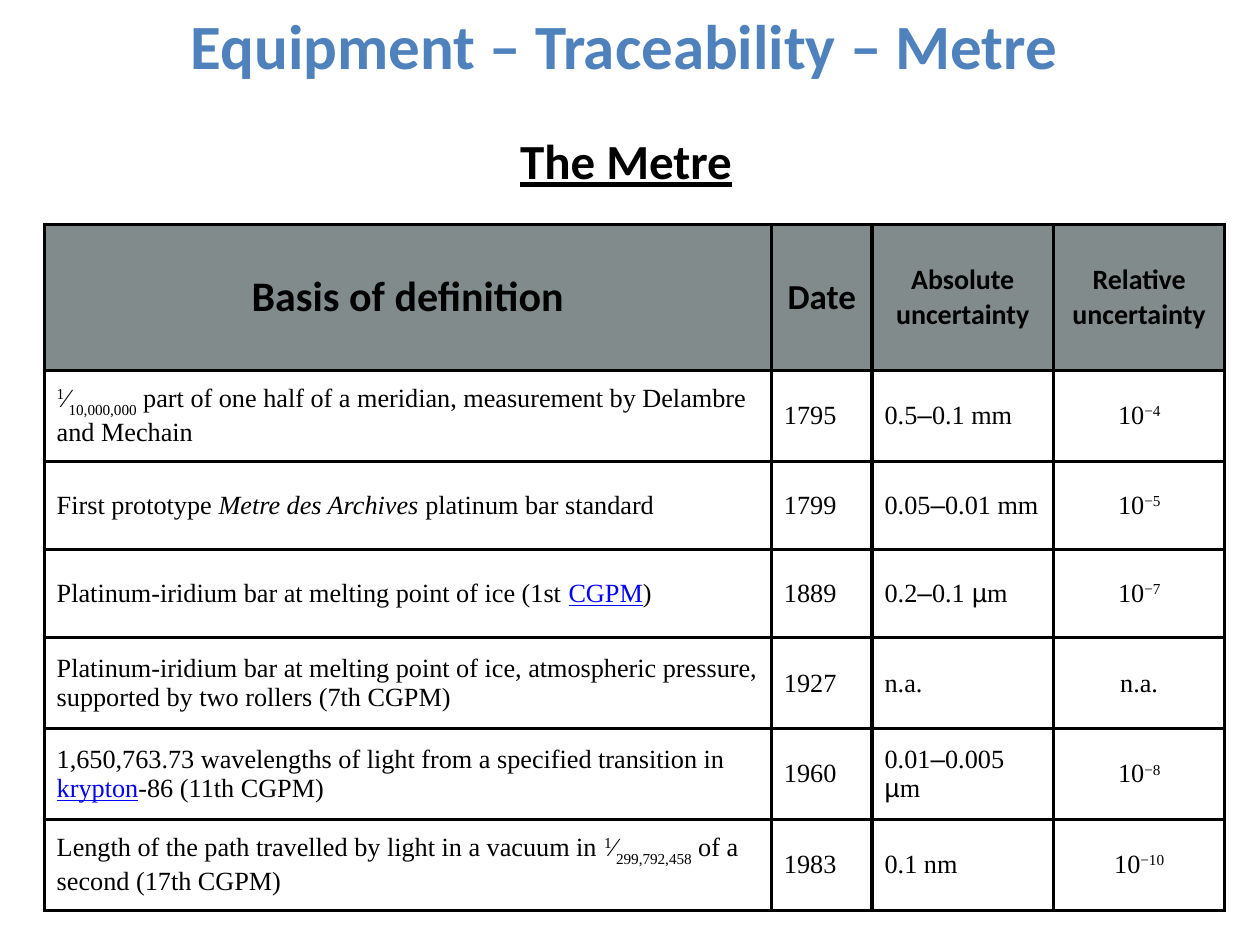
from typing import NamedTuple

from lxml import etree
from pptx import Presentation
from pptx.dml.color import RGBColor
from pptx.enum.text import MSO_ANCHOR, PP_ALIGN
from pptx.oxml.ns import qn
from pptx.util import Cm, Pt

CENTER, LEFT = PP_ALIGN.CENTER, PP_ALIGN.LEFT
TOP, MIDDLE = MSO_ANCHOR.TOP, MSO_ANCHOR.MIDDLE
TITLE_ONLY = 5
COLORS = {"title": "4F81BD", "text": "000000", "link": "0000FF",
          "header": "818B8B", "border": "000000"}
SANS, SERIF, SYMBOL = "Calibri", "Times New Roman", "Arial"
BODY_SIZE = 15
COLUMN_WIDTHS = (14.66, 2.03, 3.66, 3.45)
ROW_HEIGHTS = (2.95, 1.83, 1.78, 1.78, 1.83, 1.83, 1.83)


class Span(NamedTuple):
    text: str
    size: float = BODY_SIZE
    font: str = SERIF
    color: str = "text"
    bold: bool = False
    italic: bool = False
    underline: bool = False
    baseline: int = 0


class Definition(NamedTuple):
    basis: list[Span]
    date: str
    absolute: list[Span]
    relative: list[Span]


def heading(text: str, size: float, color: str = "text", underline: bool = False) -> Span:
    return Span(text, size, SANS, color, bold=True, underline=underline)


def link(text: str) -> Span:
    return Span(text, color="link", underline=True)


def fraction(denominator: str) -> list[Span]:
    return [Span("1", baseline=30), Span("⁄"), Span(denominator, baseline=-30)]


def power_of_ten(exponent: str) -> list[Span]:
    return [Span("10"), Span(exponent, baseline=30)]


def interval(low: str, high: str) -> list[Span]:
    return [Span(low), Span("–", font=SYMBOL), Span(high)]


def micrometres(low: str, high: str) -> list[Span]:
    return interval(low, high) + [Span(" µ", font=SYMBOL), Span("m")]


HEADERS = (("Basis of definition", 24), ("Date", 20),
           ("Absolute\nuncertainty", 16), ("Relative\nuncertainty", 16))

DEFINITIONS = (
    Definition(fraction("10,000,000")
               + [Span(" part of one half of a meridian, measurement by Delambre and Mechain")],
               "1795", interval("0.5", "0.1 mm"), power_of_ten("−4")),
    Definition([Span("First prototype "), Span("Metre des Archives", italic=True),
                Span(" platinum bar standard")],
               "1799", interval("0.05", "0.01 mm"), power_of_ten("−5")),
    Definition([Span("Platinum-iridium bar at melting point of ice (1st "),
                link("CGPM"), Span(")")],
               "1889", micrometres("0.2", "0.1"), power_of_ten("−7")),
    Definition([Span("Platinum-iridium bar at melting point of ice, atmospheric pressure, "
                     "supported by two rollers (7th CGPM)")],
               "1927", [Span("n.a.")], [Span("n.a.")]),
    Definition([Span("1,650,763.73 wavelengths of light from a specified transition in "),
                link("krypton"), Span("-86 (11th CGPM)")],
               "1960", micrometres("0.01", "0.005"), power_of_ten("−8")),
    Definition([Span("Length of the path travelled by light in a vacuum in ")]
               + fraction("299,792,458") + [Span(" of a second (17th CGPM)")],
               "1983", [Span("0.1 nm")], power_of_ten("−10")),
)


def write_spans(para, spans: list[Span], alignment) -> None:
    para.alignment = alignment
    for span in spans:
        for index, line in enumerate(span.text.split("\n")):
            if index:
                para.add_line_break()
            run = para.add_run()
            run.text = line
            font = run.font
            font.size, font.name = Pt(span.size), span.font
            font.bold, font.italic, font.underline = span.bold, span.italic, span.underline
            font.color.rgb = RGBColor.from_string(COLORS[span.color])
            if span.baseline:
                run._r.get_or_add_rPr().set("baseline", str(span.baseline * 1000))


def add_borders(cell) -> None:
    properties = cell._tc.get_or_add_tcPr()
    for index, side in enumerate(("lnL", "lnR", "lnT", "lnB")):
        line = etree.Element(qn(f"a:{side}"), w=str(Pt(2)))
        fill = etree.SubElement(line, qn("a:solidFill"))
        etree.SubElement(fill, qn("a:srgbClr"), val=COLORS["border"])
        properties.insert(index, line)


def fill_cell(cell, spans: list[Span], alignment, fill: str | None = None) -> None:
    cell.vertical_anchor = MIDDLE
    if fill:
        cell.fill.solid()
        cell.fill.fore_color.rgb = RGBColor.from_string(COLORS[fill])
    else:
        cell.fill.background()
    add_borders(cell)
    write_spans(cell.text_frame.paragraphs[0], spans, alignment)


def add_title(slide) -> None:
    title = slide.shapes.title
    title.left, title.top, title.width, title.height = Cm(1.3), Cm(0), Cm(22.86), Cm(3.18)
    title.text_frame.vertical_anchor = TOP
    write_spans(title.text_frame.paragraphs[0],
                [heading("Equipment – Traceability – Metre ", 36, "title")], CENTER)


def add_subtitle(slide) -> None:
    box = slide.shapes.add_textbox(Cm(2.69), Cm(2.51), Cm(17.32), Cm(1.52))
    box.text_frame.word_wrap = True
    para = box.text_frame.paragraphs[0]
    para._p.get_or_add_pPr().set("marL", str(Cm(2.54)))
    write_spans(para, [heading("The Metre", 28, underline=True)], CENTER)


def add_definition_table(slide) -> None:
    frame = slide.shapes.add_table(len(ROW_HEIGHTS), len(COLUMN_WIDTHS), Cm(0.89), Cm(4.52),
                                   Cm(sum(COLUMN_WIDTHS)), Cm(sum(ROW_HEIGHTS)))
    table = frame.table
    for column, width in zip(table.columns, COLUMN_WIDTHS):
        column.width = Cm(width)
    for row, height in zip(table.rows, ROW_HEIGHTS):
        row.height = Cm(height)
    for cell, (text, size) in zip(table.rows[0].cells, HEADERS):
        fill_cell(cell, [heading(text, size)], CENTER, "header")
    for row_index, item in enumerate(DEFINITIONS, start=1):
        contents = (item.basis, [Span(item.date)], item.absolute, item.relative)
        alignments = (LEFT, LEFT, LEFT, CENTER)
        for cell, spans, alignment in zip(table.rows[row_index].cells, contents, alignments):
            fill_cell(cell, spans, alignment)


def main() -> None:
    deck = Presentation()
    deck.slide_width, deck.slide_height = Cm(25.4), Cm(19.05)
    slide = deck.slides.add_slide(deck.slide_layouts[TITLE_ONLY])
    add_title(slide)
    add_subtitle(slide)
    add_definition_table(slide)
    deck.save("out.pptx")


if __name__ == "__main__":
    main()
